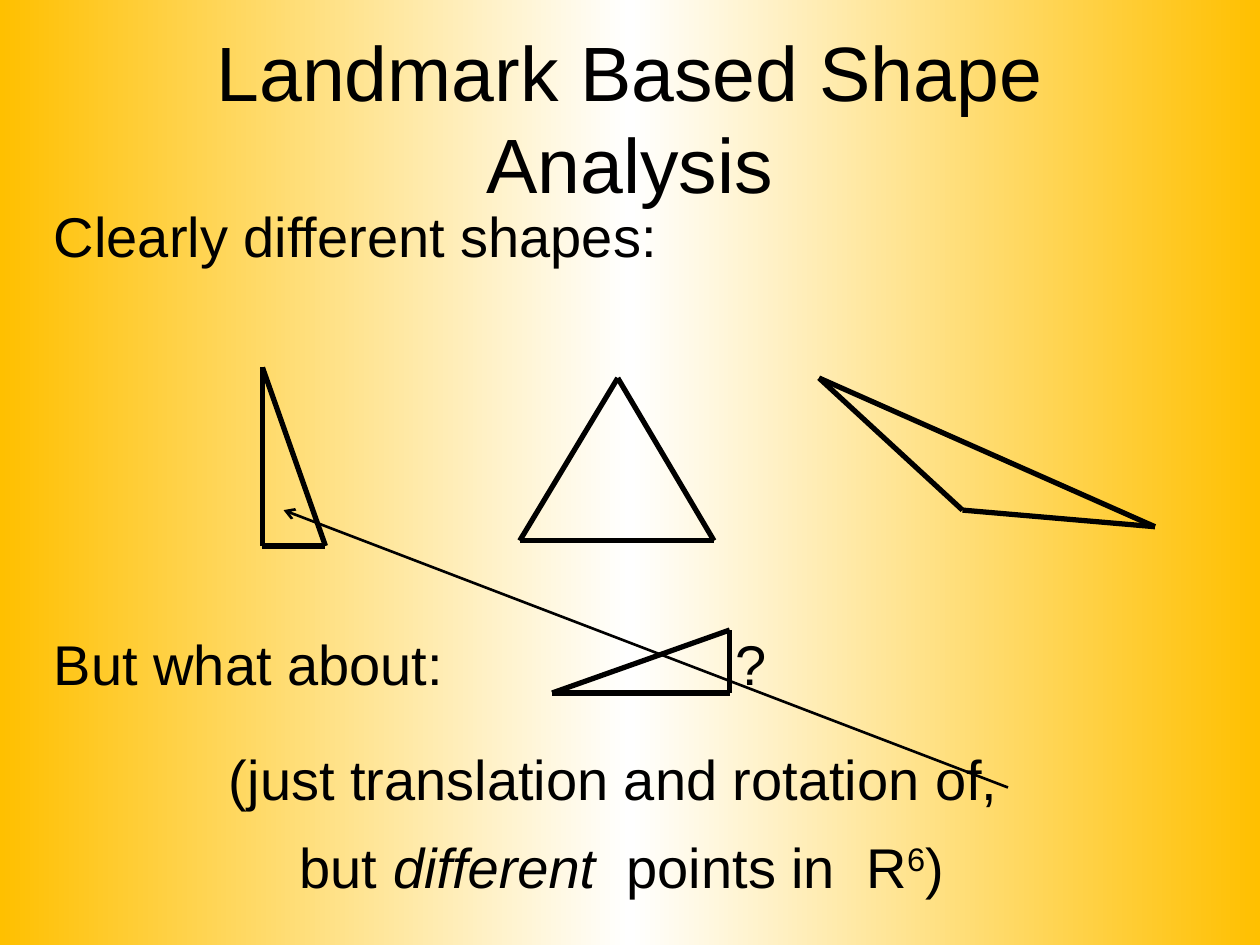
from copy import deepcopy

from lxml import etree
from pptx import Presentation
from pptx.dml.color import RGBColor
from pptx.enum import shapes, text
from pptx.oxml import ns
from pptx.util import Pt

BLACK, GOLD, WHITE = "000000", "FFC000", "FFFFFF"


def add_run(paragraph, words, size=32, italic=False, raised=0):
    """Append a run; raised is the superscript offset in percent."""
    run = paragraph.add_run()
    run.text = words
    run.font.name = "Arial"
    run.font.size = Pt(size)
    run.font.italic = italic
    run.font.color.rgb = RGBColor.from_string(BLACK)
    if raised:
        run.font._element.set("baseline", str(raised * 1000))


def add_line(parent, start, end, width):
    line = parent.add_connector(shapes.MSO_CONNECTOR.STRAIGHT, *map(Pt, start + end))
    line.line.color.rgb = RGBColor.from_string(BLACK)
    line.line.width = Pt(width)
    etree.SubElement(line.element.spPr, ns.qn("a:effectLst"))
    return line


deck = Presentation()
deck.slide_width, deck.slide_height = Pt(720), Pt(540)
slide = deck.slides.add_slide(deck.slide_layouts[6])

# Background: gold at both sides, white in the middle
background = slide.background.fill
background.gradient()
background.gradient_angle = 0
stop_list = slide.element.find(".//" + ns.qn("a:gsLst"))
stop_list.insert(1, deepcopy(stop_list[0]))
for stop, position, color in zip(background.gradient_stops, (0, 0.5, 1), (GOLD, WHITE, GOLD)):
    stop.position = position
    stop.color.rgb = RGBColor.from_string(color)

title = slide.shapes.add_textbox(Pt(36), Pt(21.6), Pt(648), Pt(90)).text_frame
title.word_wrap = True
title.vertical_anchor = text.MSO_ANCHOR.MIDDLE
title.paragraphs[0].alignment = text.PP_ALIGN.CENTER
add_run(title.paragraphs[0], "Landmark Based Shape Analysis", size=44)

# Body: space before, alignment, runs of each paragraph
LEFT, CENTER = text.PP_ALIGN.LEFT, text.PP_ALIGN.CENTER
statements = [
    (8, LEFT, [("Clearly different shapes:", {})]),
    (202, LEFT, [("But what about:\t?", {})]),
    (23.7, CENTER, [("(just translation and rotation of, ", {})]),
    (8, CENTER, [("but ", {}), ("different", {"italic": True}), ("  points in  R", {}),
                 ("6", {"raised": 30}), (")", {})]),
]
body = slide.shapes.add_textbox(Pt(23.76), Pt(108), Pt(663), Pt(408)).text_frame
body.word_wrap = True
for index, (space, alignment, runs) in enumerate(statements):
    paragraph = body.add_paragraph() if index else body.paragraphs[0]
    paragraph.alignment = alignment
    paragraph.line_spacing = 1.1
    paragraph.space_before = Pt(space)
    for words, style in runs:
        add_run(paragraph, words, **style)

# Tab stop that places the question mark beside the last triangle
question = body.paragraphs[1]._p.get_or_add_pPr()
tabs = etree.SubElement(question, ns.qn("a:tabLst"))
etree.SubElement(tabs, ns.qn("a:tab"), pos=str(Pt(389.5)), algn="l")

triangles = [
    [(150, 210), (150, 312), (186, 312)],
    [(353, 216), (408, 309), (297, 309)],
    [(468, 216), (660, 301), (550, 291.5)],
    [(315.5, 396), (417, 396), (417, 360)],
]
for corners in triangles:
    sides = slide.shapes.add_group_shape().shapes
    for start, end in zip(corners, corners[1:] + corners[:1]):
        add_line(sides, start, end, 3)

pointer = add_line(slide.shapes, (576, 450), (162, 291.5), 1.5)
etree.SubElement(pointer.line._get_or_add_ln(), ns.qn("a:tailEnd"), type="arrow")

deck.save("out.pptx")
